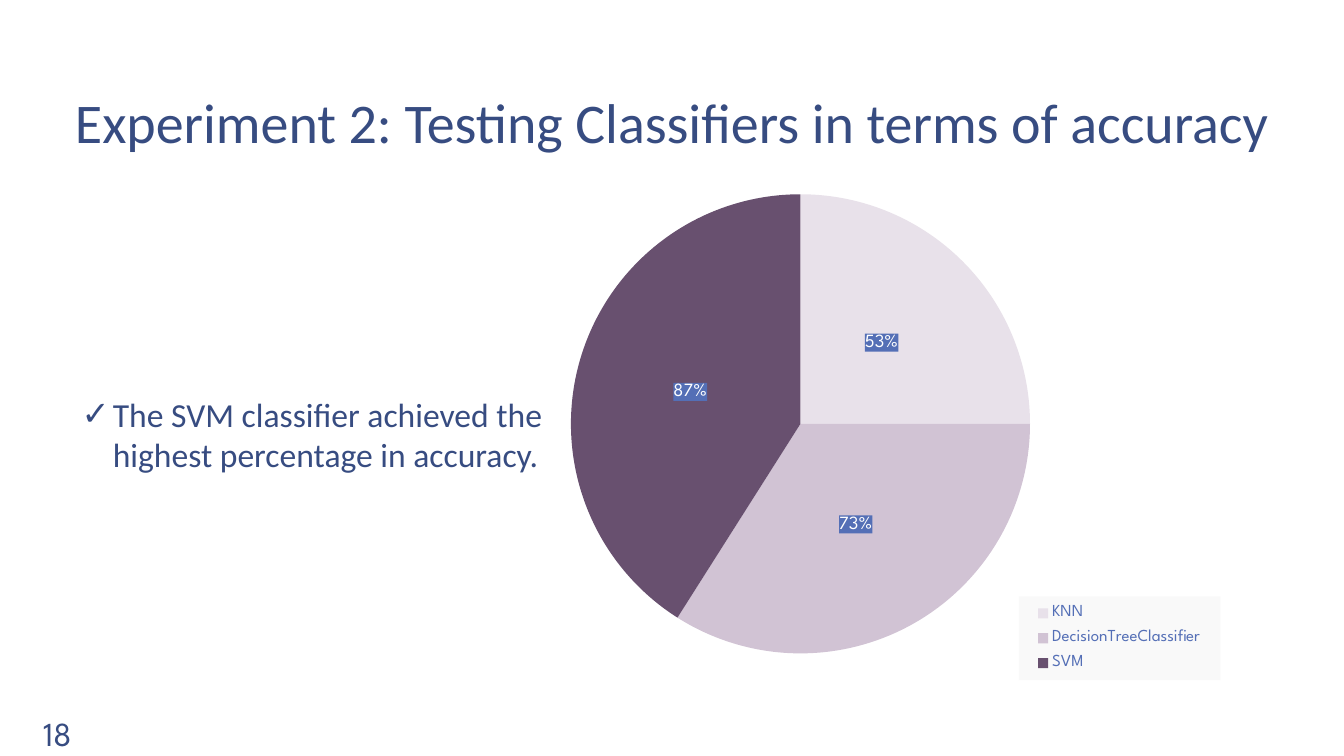
from lxml.etree import SubElement
from pptx import Presentation
from pptx.chart.data import CategoryChartData
from pptx.dml.color import RGBColor
from pptx.enum.chart import XL_CHART_TYPE, XL_LABEL_POSITION, XL_LEGEND_POSITION
from pptx.enum.text import MSO_ANCHOR, MSO_AUTO_SIZE, PP_ALIGN
from pptx.oxml import parse_xml
from pptx.oxml.ns import nsdecls, qn
from pptx.util import Cm, Pt

NAVY = "374C81"
BLUE = "546FB6"
HEADING_FONT = "Calibri"
CHART_FONT = "League Spartan"
CLASSIFIERS = [
    ("KNN", 25, "53%", "E8E1EA"),
    ("DecisionTreeClassifier", 34, "73%", "D1C3D4"),
    ("SVM", 41, "87%", "68506F"),
]


def color(value):
    return RGBColor.from_string(value)


def style_font(font, name, size, value, bold=False):
    font.name = name
    font.size = Pt(size)
    font.bold = bold
    font.color.rgb = color(value)


def add_run(paragraph, text, name, size, value=NAVY):
    run = paragraph.add_run()
    run.text = text
    style_font(run.font, name, size, value)


def place(shape, box):
    shape.left, shape.top, shape.width, shape.height = (Cm(length) for length in box)


def prepare_frame(shape, anchor):
    frame = shape.text_frame
    frame.word_wrap = True
    frame.auto_size = MSO_AUTO_SIZE.NONE
    frame.vertical_anchor = anchor
    return frame


def write_title(slide, box):
    title = slide.shapes.title
    place(title, box)
    frame = prepare_frame(title, MSO_ANCHOR.BOTTOM)
    frame.margin_left = frame.margin_right = Cm(0.33)
    frame.margin_top = frame.margin_bottom = Cm(0.18)
    paragraph = frame.paragraphs[0]
    paragraph.alignment = PP_ALIGN.CENTER
    paragraph.line_spacing = 0.85
    add_run(paragraph, "Experiment 2: Testing Classifiers in terms of accuracy", HEADING_FONT, 40)


def write_finding(slide, box):
    body = slide.placeholders[1]
    place(body, box)
    paragraph = prepare_frame(body, MSO_ANCHOR.TOP).paragraphs[0]
    paragraph.space_before = Pt(0)
    properties = paragraph._p.get_or_add_pPr()
    properties.set("marL", str(Cm(0.79)))
    properties.set("indent", str(-Cm(0.79)))
    SubElement(properties, qn("a:buChar"), char="✓")
    add_run(paragraph, "The SVM classifier achieved the highest percentage in accuracy.", HEADING_FONT, 24)


def write_slide_number(slide, box):
    number = slide.shapes.add_textbox(*(Cm(length) for length in box))
    paragraph = prepare_frame(number, MSO_ANCHOR.TOP).paragraphs[0]
    add_run(paragraph, "18", CHART_FONT, 24)


def manual_layout(x, y, width, height, target=""):
    return parse_xml(
        f'<c:layout {nsdecls("c")}><c:manualLayout>{target}'
        '<c:xMode val="edge"/><c:yMode val="edge"/>'
        f'<c:x val="{x}"/><c:y val="{y}"/><c:w val="{width}"/><c:h val="{height}"/>'
        '</c:manualLayout></c:layout>'
    )


def solid_fill(value):
    return parse_xml(
        f'<c:spPr {nsdecls("c", "a")}><a:solidFill><a:srgbClr val="{value}"/></a:solidFill></c:spPr>'
    )


def format_legend(chart):
    chart.has_legend = True
    legend = chart.legend
    legend.position = XL_LEGEND_POSITION.RIGHT
    legend.include_in_layout = False
    style_font(legend.font, CHART_FONT, 12, BLUE)
    element = chart.element.find(".//" + qn("c:legend"))
    for layout in element.findall(qn("c:layout")):
        element.remove(layout)
    element.find(qn("c:legendPos")).addnext(manual_layout(0.8, 0.83, 0.18, 0.17))
    element.find(qn("c:overlay")).addnext(solid_fill("F9F9F9"))


def format_slices(chart):
    plot = chart.plots[0]
    plot.vary_by_categories = True
    plot.has_data_labels = True
    labels = plot.data_labels
    labels.show_percentage = True
    labels.show_value = False
    labels.position = XL_LABEL_POSITION.CENTER
    style_font(labels.font, CHART_FONT, 13.3, "FFFFFF")
    for index, (_, _, accuracy, fill) in enumerate(CLASSIFIERS):
        point = plot.series[0].points[index]
        point.format.fill.solid()
        point.format.fill.fore_color.rgb = color(fill)
        point.format.line.fill.background()
        label = point.data_label
        add_run(label.text_frame.paragraphs[0], accuracy, CHART_FONT, 13.3, "FFFFFF")
        label.position = XL_LABEL_POSITION.CENTER
    for element in chart.element.iter(qn("c:dLbl")):
        element.find(qn("c:dLblPos")).addprevious(solid_fill(BLUE))


def draw_accuracy_pie(slide, box):
    data = CategoryChartData()
    data.categories = [name for name, *_ in CLASSIFIERS]
    data.add_series("Series 1", [share for _, share, *_ in CLASSIFIERS])
    frame = slide.shapes.add_chart(XL_CHART_TYPE.PIE, *(Cm(length) for length in box), data)
    chart = frame.chart
    chart.has_title = False
    style_font(chart.font, CHART_FONT, 10, NAVY)
    format_slices(chart)
    format_legend(chart)
    plot_area = chart.element.find(".//" + qn("c:plotArea"))
    for layout in plot_area.findall(qn("c:layout")):
        plot_area.remove(layout)
    plot_area.insert(0, manual_layout(0.4, 0.01, 0.41, 0.94, '<c:layoutTarget val="inner"/>'))


def main():
    presentation = Presentation()
    presentation.slide_width = Cm(33.87)
    presentation.slide_height = Cm(19.05)
    slide = presentation.slides.add_slide(presentation.slide_layouts[1])
    write_title(slide, (0.84, 0.2, 32.18, 3.89))
    draw_accuracy_pie(slide, (3.1, 4.72, 28.22, 12.42))
    write_slide_number(slide, (0.84, 17.83, 1.47, 1.27))
    write_finding(slide, (1.8, 9.8, 12.5, 2.31))
    presentation.save("out.pptx")


if __name__ == "__main__":
    main()
